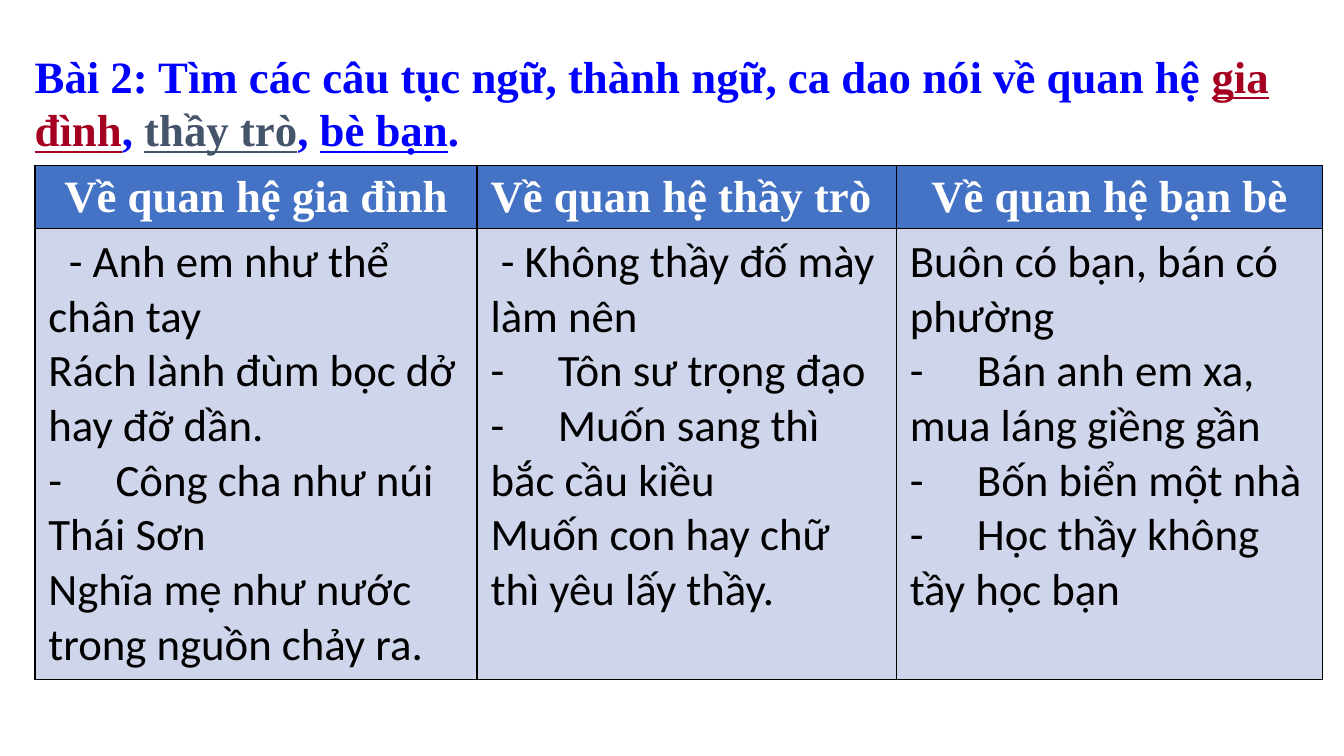
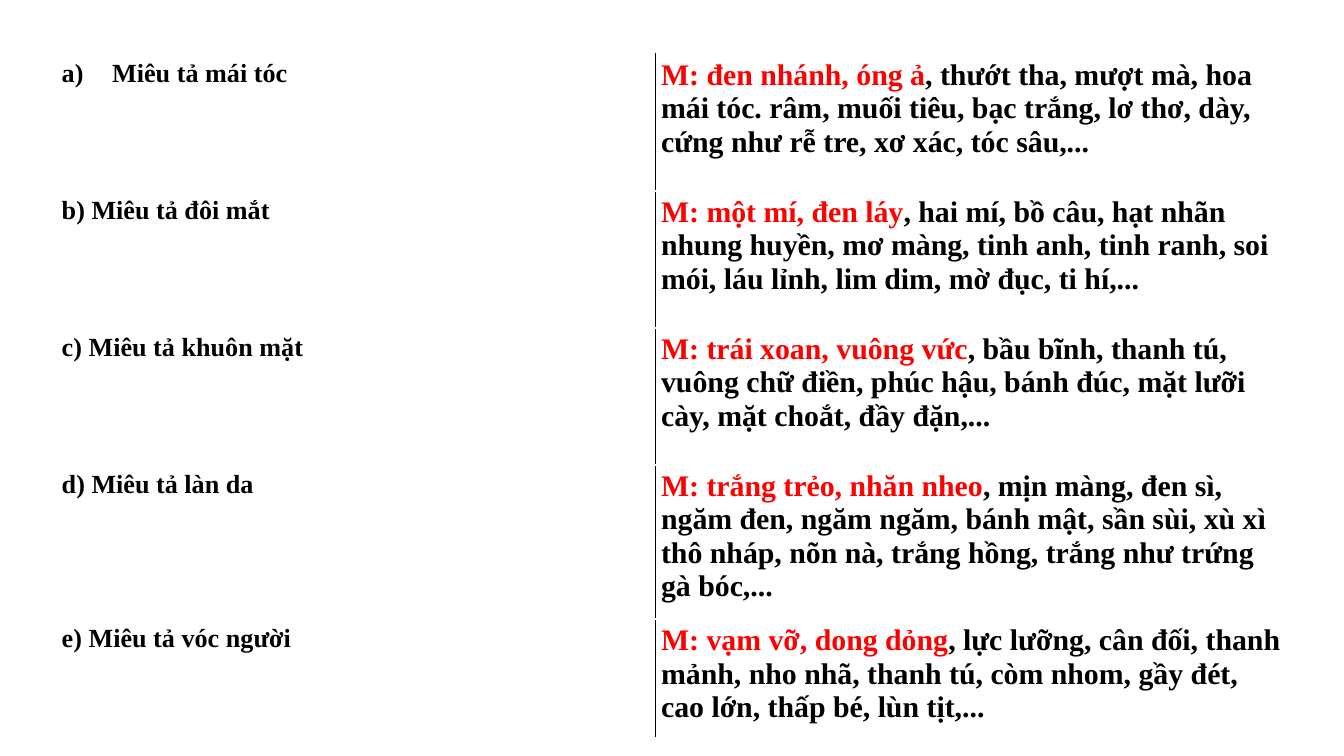
from lxml.etree import SubElement
from pptx import Presentation
from pptx.dml.color import RGBColor
from pptx.enum.text import PP_ALIGN as Align
from pptx.oxml.ns import qn
from pptx.util import Pt

COLORS = {
    "black": "000000", "white": "FFFFFF", "blue": "0000FF", "crimson": "A50021",
    "slate": "44546A", "red": "FF0000", "header": "4472C4", "body": "CFD5EA",
}
SERIF, SANS = "Times New Roman", "Calibri"

# (text, color, underlined)
TITLE = [
    ("Bài 2: Tìm các câu tục ngữ, thành ngữ, ca dao nói về quan hệ ", "blue", False),
    ("gia đình", "crimson", True),
    (", ", "blue", False),
    ("thầy trò", "slate", True),
    (", ", "blue", False),
    ("bè bạn", "blue", True),
    (".", "blue", False),
]

SAYINGS = [
    {"heading": "Về quan hệ gia đình", "align": Align.CENTER, "width": 236.9,
     "indent": 11, "tab": 18.4,
     "lines": ["- Anh em như thể chân tay",
               "Rách lành đùm bọc dở hay đỡ dần.",
               "-\tCông cha như núi Thái Sơn",
               "Nghĩa mẹ như nước trong nguồn chảy ra."]},
    {"heading": "Về quan hệ thầy trò", "align": Align.LEFT, "width": 224.6,
     "indent": 5.5, "tab": 18.4,
     "lines": ["- Không thầy đố mày làm nên",
               "-\tTôn sư trọng đạo",
               "-\tMuốn sang thì bắc cầu kiều",
               "Muốn con hay chữ thì yêu lấy thầy."]},
    {"heading": "Về quan hệ bạn bè", "align": Align.CENTER, "width": 228.2,
     "indent": 0, "tab": 23.8,
     "lines": ["Buôn có bạn, bán có phường",
               "-\tBán anh em xa, mua láng giềng gần",
               "-\tBốn biển một nhà",
               "-\tHọc thầy không tầy học bạn"]},
]
SAYING_ROWS = [33.6, 241.6]

# (label, model words, further words, row height)
DESCRIPTIONS = [
    ("Miêu tả mái tóc", "M: đen nhánh, óng ả",
     ", thướt tha, mượt mà, hoa mái tóc. râm, muối tiêu, bạc trắng, lơ thơ, dày, "
     "cứng như rễ tre, xơ xác, tóc sâu,...", 73.4),
    ("b) Miêu tả đôi mắt", "M: một mí, đen láy",
     ", hai mí, bồ câu, hạt nhãn nhung huyền, mơ màng, tinh anh, tinh ranh, soi mói, "
     "láu lỉnh, lim dim, mờ đục, ti hí,...", 73.4),
    ("c) Miêu tả khuôn mặt", "M: trái xoan, vuông vức",
     ", bầu bĩnh, thanh tú, vuông chữ điền, phúc hậu, bánh đúc, mặt lưỡi cày, "
     "mặt choắt, đầy đặn,...", 73.4),
    ("d) Miêu tả làn da", "M: trắng trẻo, nhăn nheo",
     ", mịn màng, đen sì, ngăm đen, ngăm ngăm, bánh mật, sần sùi, xù xì thô nháp, "
     "nõn nà, trắng hồng, trắng như trứng gà bóc,...", 82.5),
    ("e) Miêu tả vóc người", "M: vạm vỡ, dong dỏng",
     ", lực lưỡng, cân đối, thanh mảnh, nho nhã, thanh tú, còm nhom, gầy đét, "
     "cao lớn, thấp bé, lùn tịt,...", 63.8),
]
DESCRIPTION_WIDTHS = [321.1, 339.1]


def rgb(name):
    return RGBColor.from_string(COLORS[name])


def add_run(paragraph, text, size, color, font=SERIF, bold=True, underline=False):
    run = paragraph.add_run()
    run.text = text
    run.font.size = Pt(size)
    run.font.name = font
    run.font.bold = bold
    run.font.underline = underline
    run.font.color.rgb = rgb(color)


def add_table(slide, left, top, widths, heights):
    table = slide.shapes.add_table(
        len(heights), len(widths), Pt(left), Pt(top), Pt(sum(widths)), Pt(sum(heights))).table
    table.first_row = table.horz_banding = False
    for column, width in zip(table.columns, widths):
        column.width = Pt(width)
    for row, height in zip(table.rows, heights):
        row.height = Pt(height)
    return table


def style_cell(cell, sides, fill=None):
    """Draw black borders on the given sides (in L, R, T, B order), then fill."""
    properties = cell._tc.get_or_add_tcPr()
    for side in sides:
        line = SubElement(properties, qn(f"a:ln{side}"), w=str(Pt(1)))
        solid = SubElement(line, qn("a:solidFill"))
        SubElement(solid, qn("a:srgbClr"), val=COLORS["black"])
    if fill:
        cell.fill.solid()
        cell.fill.fore_color.rgb = rgb(fill)
    else:
        cell.fill.background()


def set_indent(paragraph, margin, indent):
    properties = paragraph._p.get_or_add_pPr()
    properties.set("marL", str(Pt(margin)))
    properties.set("indent", str(Pt(indent)))
    return properties


def add_saying(paragraph, text, first, column):
    properties = set_indent(paragraph, 0, column["indent"] if first else 0)
    if "\t" in text:
        tabs = SubElement(properties, qn("a:tabLst"))
        SubElement(tabs, qn("a:tab"), pos=str(Pt(column["tab"])), algn="l")
    add_run(paragraph, text, 24, "black", SANS, bold=False)


def build_sayings(slide):
    table = add_table(slide, 18.7, 88.6, [column["width"] for column in SAYINGS], SAYING_ROWS)
    for index, column in enumerate(SAYINGS):
        heading, body = table.cell(0, index), table.cell(1, index)
        style_cell(heading, "LRTB", "header")
        style_cell(body, "LRTB", "body")
        paragraph = heading.text_frame.paragraphs[0]
        paragraph.alignment = column["align"]
        add_run(paragraph, column["heading"], 24, "white")
        frame = body.text_frame
        for number, text in enumerate(column["lines"]):
            paragraph = frame.add_paragraph() if number else frame.paragraphs[0]
            add_saying(paragraph, text, number == 0, column)

    frame = slide.shapes.add_textbox(Pt(11.5), Pt(22.3), Pt(696.2), Pt(65.5)).text_frame
    frame.word_wrap = True
    for text, color, underline in TITLE:
        add_run(frame.paragraphs[0], text, 24, color, underline=underline)


def build_descriptions(slide):
    table = add_table(slide, 30.2, 28.8, DESCRIPTION_WIDTHS, [row[-1] for row in DESCRIPTIONS])
    for index, (label, model, further, _) in enumerate(DESCRIPTIONS):
        cells = table.cell(index, 0), table.cell(index, 1)
        for cell, side in zip(cells, "RL"):
            cell.margin_left = cell.margin_right = Pt(2.9)
            cell.margin_top = cell.margin_bottom = Pt(2.9)
            style_cell(cell, side)
        left, right = (cell.text_frame.paragraphs[0] for cell in cells)
        if index == 0:
            properties = set_indent(left, 27, -27)
            SubElement(properties, qn("a:buFont"), typeface=SERIF)
            SubElement(properties, qn("a:buAutoNum"), type="alphaLcParenR")
        add_run(left, label, 14, "black")
        add_run(right, model, 16, "red")
        add_run(right, further, 16, "black")


def main():
    presentation = Presentation()
    presentation.slide_width, presentation.slide_height = Pt(720), Pt(405)
    blank = presentation.slide_layouts[6]
    for build in (build_sayings, build_descriptions):
        build(presentation.slides.add_slide(blank))
    presentation.save("out.pptx")


if __name__ == "__main__":
    main()
